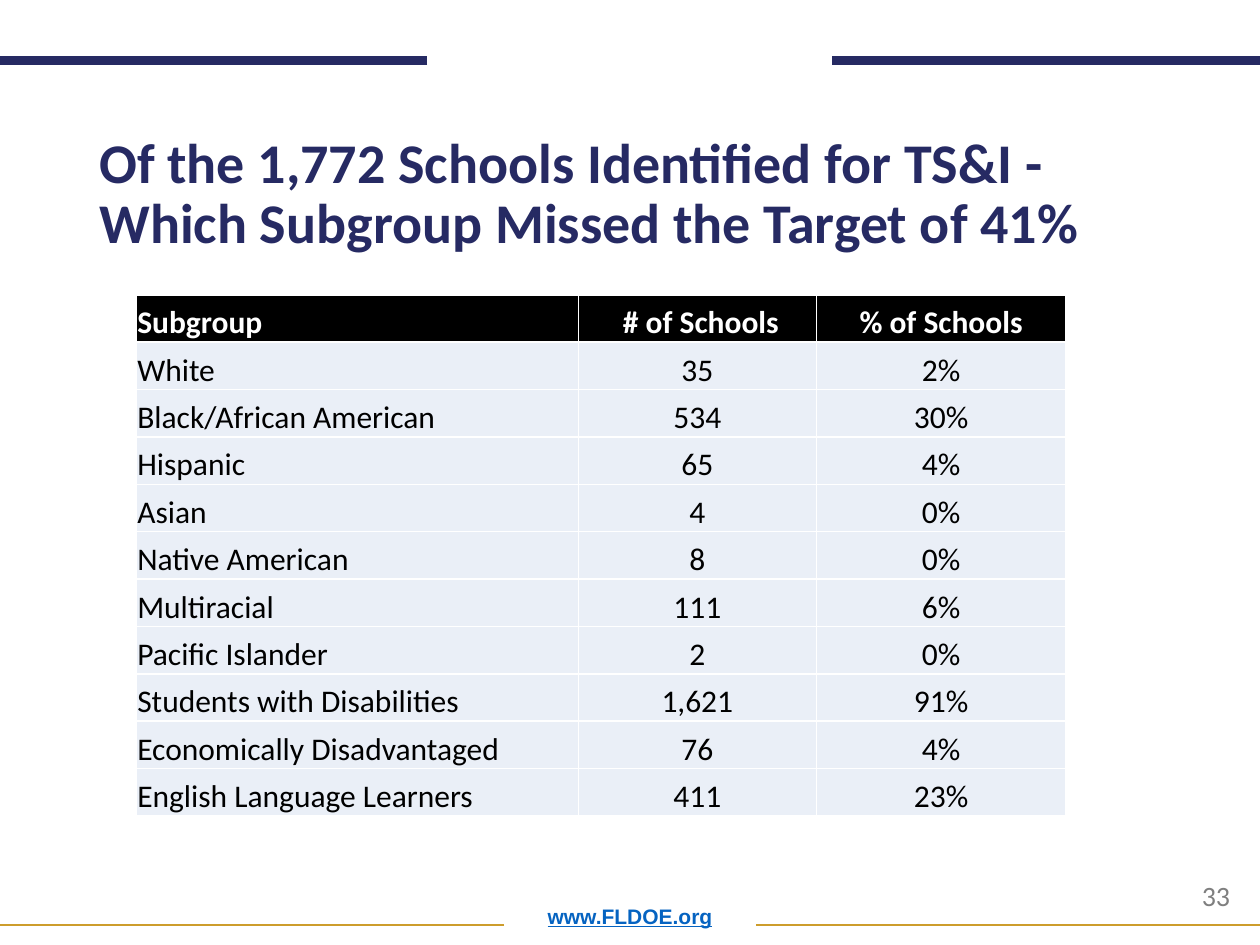
from lxml import etree
from pptx import Presentation
from pptx.dml.color import RGBColor
from pptx.enum.shapes import MSO_CONNECTOR
from pptx.enum.text import MSO_ANCHOR, PP_ALIGN
from pptx.oxml.ns import qn
from pptx.util import Inches, Pt

LEFT, CENTER = PP_ALIGN.LEFT, PP_ALIGN.CENTER
TOP, BOTTOM = MSO_ANCHOR.TOP, MSO_ANCHOR.BOTTOM
STRAIGHT = MSO_CONNECTOR.STRAIGHT

COLORS = {
    "navy": "262A63", "gold": "CD9D2C", "link": "0563C1", "gray": "7F7F7F",
    "white": "FFFFFF", "black": "000000", "band": "EAEFF7",
}

# Content
TITLE = "Of the 1,772 Schools Identified for TS&I - Which Subgroup Missed the Target of 41%"
SITE = "www.FLDOE.org"
PAGE = "33"
HEADER = ("Subgroup", " # of Schools", "% of Schools")
SUBGROUPS = [
    ("White", "35", "2%"),
    ("Black/African American", "534", "30%"),
    ("Hispanic", "65", "4%"),
    ("Asian", "4", "0%"),
    ("Native American", "8", "0%"),
    ("Multiracial", "111", "6%"),
    ("Pacific Islander", "2", "0%"),
    ("Students with Disabilities", "1,621", "91%"),
    ("Economically Disadvantaged", "76", "4%"),
    ("English Language Learners", "411", "23%"),
]

# Layout: rules are (from x, to x, y, color, width in points)
RULES = [
    (3.39, 0, 0.48, "navy", 5),
    (10, 6.6, 0.48, "navy", 5),
    (4, 0, 7.34, "gold", 1),
    (10, 6, 7.34, "gold", 1),
]
TABLE_AT = (1.08, 2.34, 7.38, 4.14)
COL_WIDTHS = (3.51, 1.89, 1.98)
CELL_MARGINS = {"margin_left": 0.01, "margin_right": 0.01,
                "margin_top": 0.01, "margin_bottom": 0}


def rgb(name):
    return RGBColor.from_string(COLORS[name])


def write(tf, text, color, align=LEFT, spacing=None, **font):
    p = tf.paragraphs[0]
    p.alignment = align
    p.line_spacing = spacing
    r = p.add_run()
    r.text = text
    r.font.color.rgb = rgb(color)
    for name, value in {"name": "Calibri", **font}.items():
        setattr(r.font, name, value)


def add_text(slide, at, text, color, anchor=BOTTOM, **style):
    tf = slide.shapes.add_textbox(*map(Inches, at)).text_frame
    tf.word_wrap = True
    tf.vertical_anchor = anchor
    write(tf, text, color, **style)


def add_rule(slide, x1, x2, y, color, width):
    line = slide.shapes.add_connector(STRAIGHT, Inches(x1), Inches(y), Inches(x2), Inches(y))
    line.line.color.rgb = rgb(color)
    line.line.width = Pt(width)
    etree.SubElement(line._element.spPr, qn("a:effectLst"))


def add_borders(cell, color, width):
    tc_pr = cell._tc.get_or_add_tcPr()
    for i, side in enumerate(("a:lnL", "a:lnR", "a:lnT", "a:lnB")):
        ln = etree.Element(qn(side), w=str(Pt(width)))
        fill = etree.SubElement(ln, qn("a:solidFill"))
        etree.SubElement(fill, qn("a:srgbClr"), val=COLORS[color])
        tc_pr.insert(i, ln)


def add_subgroup_table(slide):
    rows = [HEADER, *SUBGROUPS]
    table = slide.shapes.add_table(len(rows), len(HEADER), *map(Inches, TABLE_AT)).table
    table.horz_banding = False
    for col, width in zip(table.columns, COL_WIDTHS):
        col.width = Inches(width)
    for i, row in enumerate(rows):
        is_header = i == 0
        for j, text in enumerate(row):
            cell = table.cell(i, j)
            for name, value in CELL_MARGINS.items():
                setattr(cell, name, Inches(value))
            cell.vertical_anchor = BOTTOM
            cell.fill.solid()
            cell.fill.fore_color.rgb = rgb("black" if is_header else "band")
            add_borders(cell, "white", 1)
            write(cell.text_frame, text, "white" if is_header else "black",
                  align=CENTER if j else LEFT, size=Pt(18), bold=is_header)


def main():
    prs = Presentation()
    prs.slide_width, prs.slide_height = Inches(10), Inches(7.5)
    s = prs.slides.add_slide(prs.slide_layouts[6])

    # Frame: rules, web address and page number
    add_text(s, (0.69, 7, 8.62, 0.42), SITE, "link", align=CENTER, spacing=0.9,
             name="Arial", size=Pt(12), bold=True, underline=True)
    for rule in RULES:
        add_rule(s, *rule)
    add_text(s, (9.44, 6.92, 0.52, 0.37), PAGE, "gray", anchor=TOP, size=Pt(16))

    # Title and table
    add_text(s, (0.69, 1.21, 8.62, 0.87), TITLE, "navy", spacing=0.9, size=Pt(32), bold=True)
    add_subgroup_table(s)

    prs.save("out.pptx")


if __name__ == "__main__":
    main()
